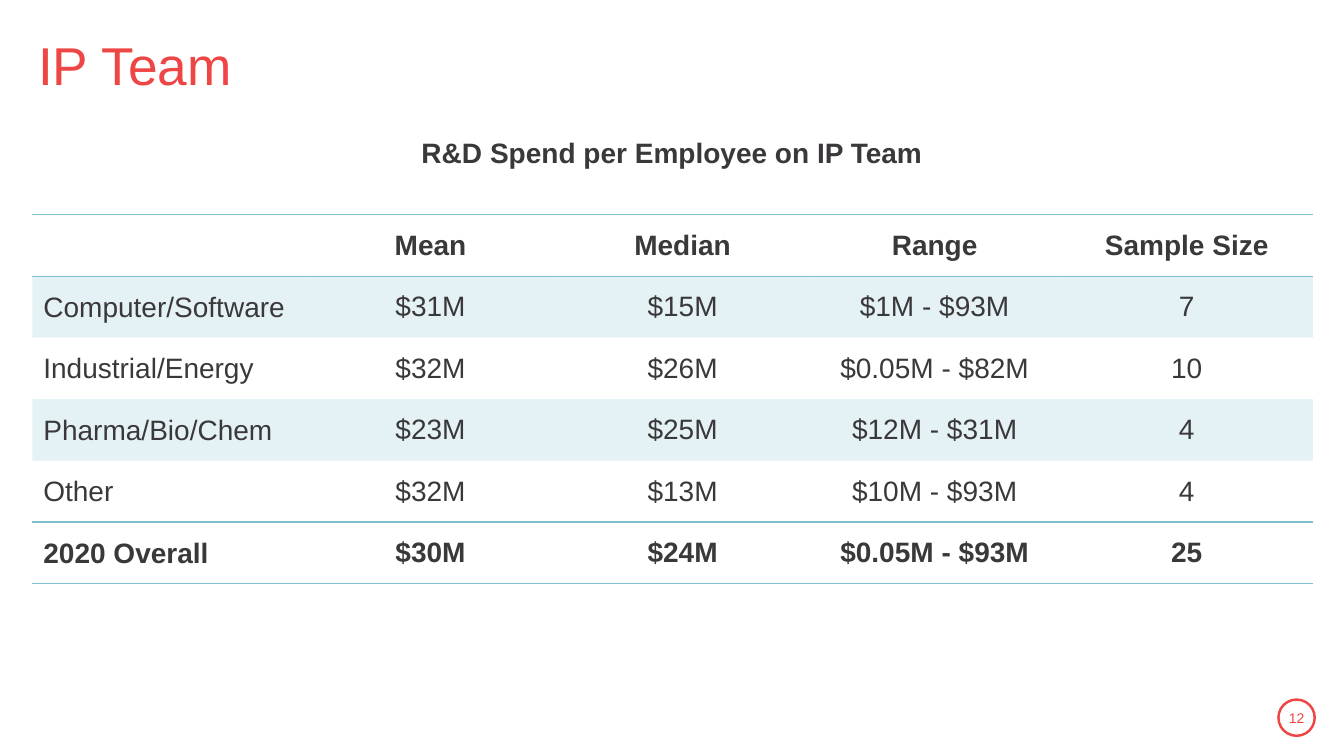
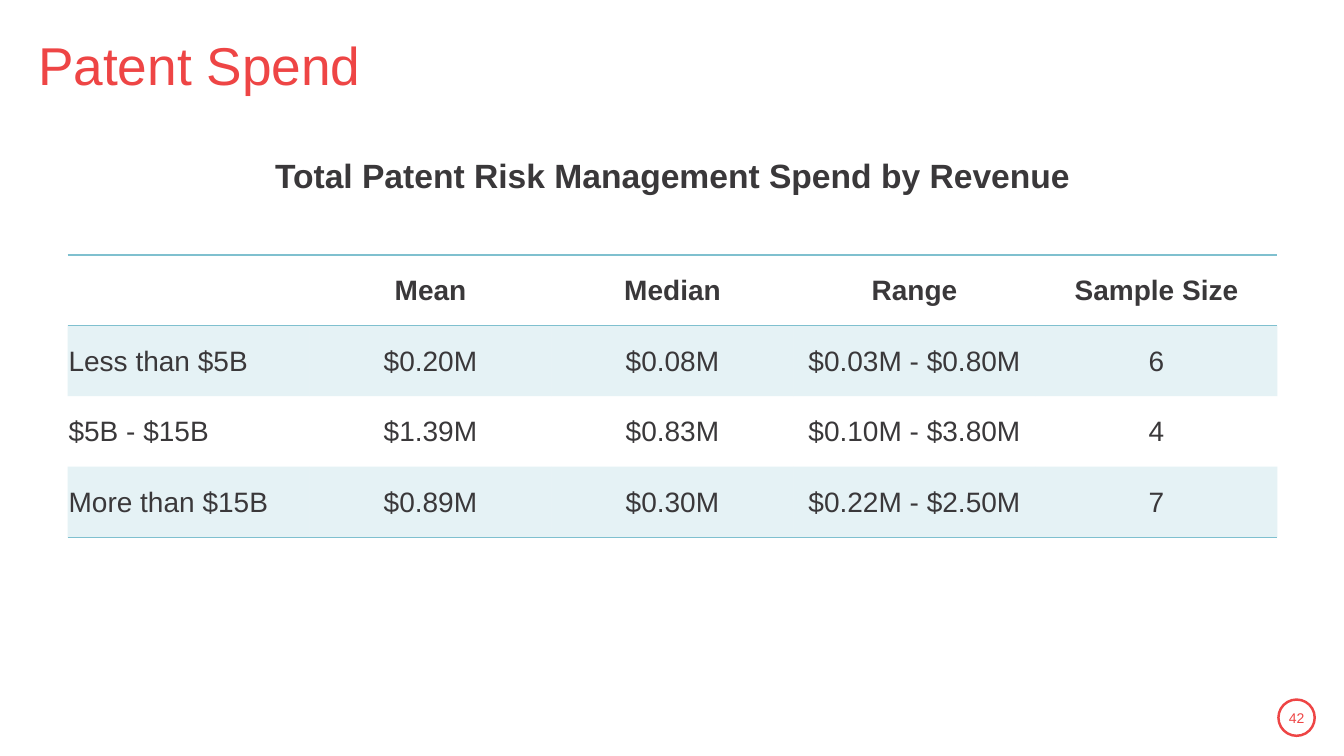
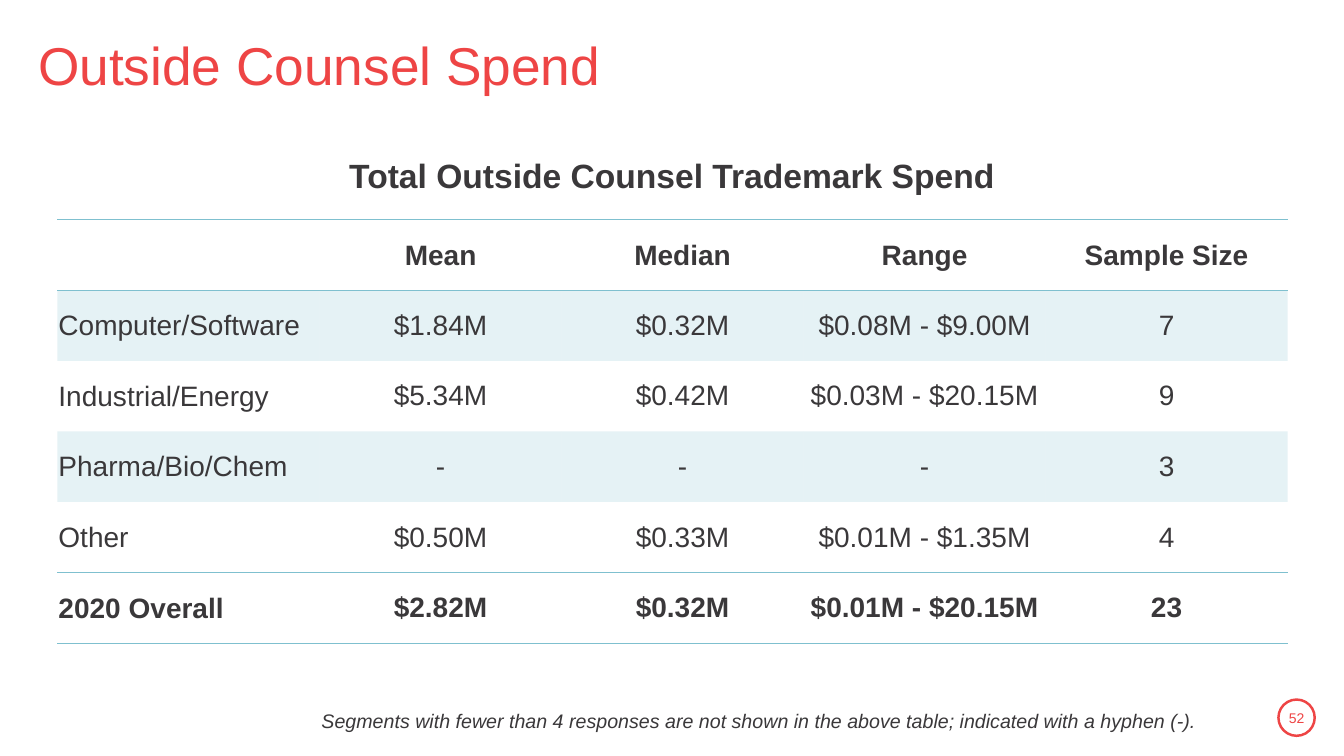
from lxml.etree import SubElement
from pptx import Presentation
from pptx.dml.color import RGBColor
from pptx.enum.shapes import MSO_SHAPE
from pptx.enum.text import MSO_ANCHOR, PP_ALIGN
from pptx.oxml.ns import qn
from pptx.util import Inches, Pt

# Shared style
RED = RGBColor(0xEE, 0x45, 0x45)
TEAL = RGBColor(0x7F, 0xC0, 0xCF)
DARK = RGBColor(0x3A, 0x38, 0x3A)
FONT = "Arial"
PLAIN_TABLE = "{2D5ABB26-0587-4C30-8999-92F81FD0307C}"
HEADINGS = ("", "Mean", "Median", "Range", "Sample Size")


def write_text(frame, text, size=20, color=DARK, bold=False, italic=False,
               align=PP_ALIGN.LEFT, spacing=None, indent=0):
    para = frame.paragraphs[0]
    para.alignment = align
    if spacing:
        para.line_spacing = spacing
    if indent:
        para._p.get_or_add_pPr().set("marL", str(Inches(indent)))
    span = para.add_run()
    span.text = text
    span.font.name = FONT
    span.font.size = Pt(size)
    span.font.color.rgb = color
    span.font.bold = bold
    span.font.italic = italic


def rule_cell(cell, sides):
    """Draw teal rules on the given sides, T before B; call before filling."""
    properties = cell._tc.get_or_add_tcPr()
    for side in sides:
        line = SubElement(properties, qn(f"a:ln{side}"), w=str(Pt(1)))
        fill = SubElement(line, qn("a:solidFill"))
        SubElement(fill, qn("a:srgbClr"), val=str(TEAL))


def tint_cell(cell):
    cell.fill.solid()
    cell.fill.fore_color.rgb = TEAL
    color = cell._tc.tcPr.find(qn("a:solidFill")).find(qn("a:srgbClr"))
    SubElement(color, qn("a:alpha"), val="20000")


class Report:
    def __init__(self):
        self.deck = Presentation()
        self.deck.slide_width = Inches(13.33)
        self.deck.slide_height = Inches(7.5)
        self.page = None

    def add_page(self, title, number):
        self.page = self.deck.slides.add_slide(self.deck.slide_layouts[6])
        self.add_text(title, 0.28, 0.24, 12.82, 0.87, anchor=MSO_ANCHOR.MIDDLE,
                      size=38, color=RED, spacing=0.9)
        # Page number in its ring
        ring = self.page.shapes.add_shape(
            MSO_SHAPE.OVAL, Inches(12.68), Inches(6.94), Inches(0.36), Inches(0.36))
        ring.shadow.inherit = False
        ring.fill.background()
        ring.line.color.rgb = RED
        ring.line.width = Pt(1.75)
        self.add_text(str(number), 12.63, 6.92, 0.46, 0.4, anchor=MSO_ANCHOR.MIDDLE,
                      size=10, color=RED, align=PP_ALIGN.CENTER)

    def add_text(self, text, left, top, width, height, anchor=MSO_ANCHOR.TOP, **style):
        box = self.page.shapes.add_textbox(
            Inches(left), Inches(top), Inches(width), Inches(height))
        box.text_frame.word_wrap = True
        box.text_frame.vertical_anchor = anchor
        write_text(box.text_frame, text, **style)

    def add_heading(self, text, left, top, width, height, size=24):
        self.add_text(text, left, top, width, height, size=size, bold=True,
                      align=PP_ALIGN.CENTER)

    def add_table(self, rows, left, top, label_width, value_width, row_height,
                  label_indent=0, value_inset=0):
        rows = [HEADINGS, *rows]
        widths = [label_width] + [value_width] * (len(HEADINGS) - 1)
        frame = self.page.shapes.add_table(
            len(rows), len(widths), Inches(left), Inches(top),
            Inches(sum(widths)), Inches(row_height * len(rows)))
        table = frame.table
        table.first_row = table.horz_banding = False
        table._tbl.tblPr.find(qn("a:tableStyleId")).text = PLAIN_TABLE
        for column, width in zip(table.columns, widths):
            column.width = Inches(width)
        for index, row in enumerate(rows):
            table.rows[index].height = Inches(row_height)
            strong = index == 0 or row[0] == "2020 Overall"
            sides = "TB" if strong else "B" if index == len(rows) - 1 else ""
            for place, text in enumerate(row):
                cell = table.cell(index, place)
                is_label = place == 0
                inset = 0.01 if index == 0 or is_label else value_inset
                cell.margin_left = cell.margin_top = cell.margin_right = Inches(inset)
                cell.margin_bottom = 0
                cell.vertical_anchor = MSO_ANCHOR.MIDDLE
                rule_cell(cell, sides)
                if index % 2 and not strong:
                    tint_cell(cell)
                else:
                    cell.fill.background()
                if text:
                    write_text(cell.text_frame, text, bold=strong,
                               align=PP_ALIGN.LEFT if is_label else PP_ALIGN.CENTER,
                               indent=label_indent if is_label else 0)


def main():
    report = Report()

    # Spend per employee
    report.add_page("IP Team", 12)
    report.add_heading("R&D Spend per Employee on IP Team", 3.27, 1.3, 6.79, 0.44, size=20)
    report.add_table([
        ("Computer/Software", "$31M", "$15M", "$1M - $93M", "7"),
        ("Industrial/Energy", "$32M", "$26M", "$0.05M - $82M", "10"),
        ("Pharma/Bio/Chem", "$23M", "$25M", "$12M - $31M", "4"),
        ("Other", "$32M", "$13M", "$10M - $93M", "4"),
        ("2020 Overall", "$30M", "$24M", "$0.05M - $93M", "25"),
    ], 0.32, 2.13, 2.7, 2.5, 0.61, label_indent=0.1)

    # Spend by revenue
    report.add_page("Patent Spend", 42)
    report.add_heading("Total Patent Risk Management Spend by Revenue", 2.03, 1.49, 9.28, 0.5)
    report.add_table([
        ("Less than $5B", "$0.20M", "$0.08M", "$0.03M - $0.80M", "6"),
        ("$5B - $15B", "$1.39M", "$0.83M", "$0.10M - $3.80M", "4"),
        ("More than $15B", "$0.89M", "$0.30M", "$0.22M - $2.50M", "7"),
    ], 0.67, 2.53, 2.4, 2.4, 0.7, value_inset=0.01)

    # Trademark spend
    report.add_page("Outside Counsel Spend", 52)
    report.add_heading("Total Outside Counsel Trademark Spend", 1.01, 1.49, 11.31, 0.5)
    report.add_table([
        ("Computer/Software", "$1.84M", "$0.32M", "$0.08M - $9.00M", "7"),
        ("Industrial/Energy", "$5.34M", "$0.42M", "$0.03M - $20.15M", "9"),
        ("Pharma/Bio/Chem", "-", "-", "-", "3"),
        ("Other", "$0.50M", "$0.33M", "$0.01M - $1.35M", "4"),
        ("2020 Overall", "$2.82M", "$0.32M", "$0.01M - $20.15M", "23"),
    ], 0.57, 2.18, 2.6, 2.4, 0.7)
    report.add_text(
        "Segments with fewer than 4 responses are not shown in the above table; "
        "indicated with a hyphen (-).", 3.09, 6.98, 8.95, 0.34, size=14, italic=True)

    report.deck.save("out.pptx")


if __name__ == "__main__":
    main()
